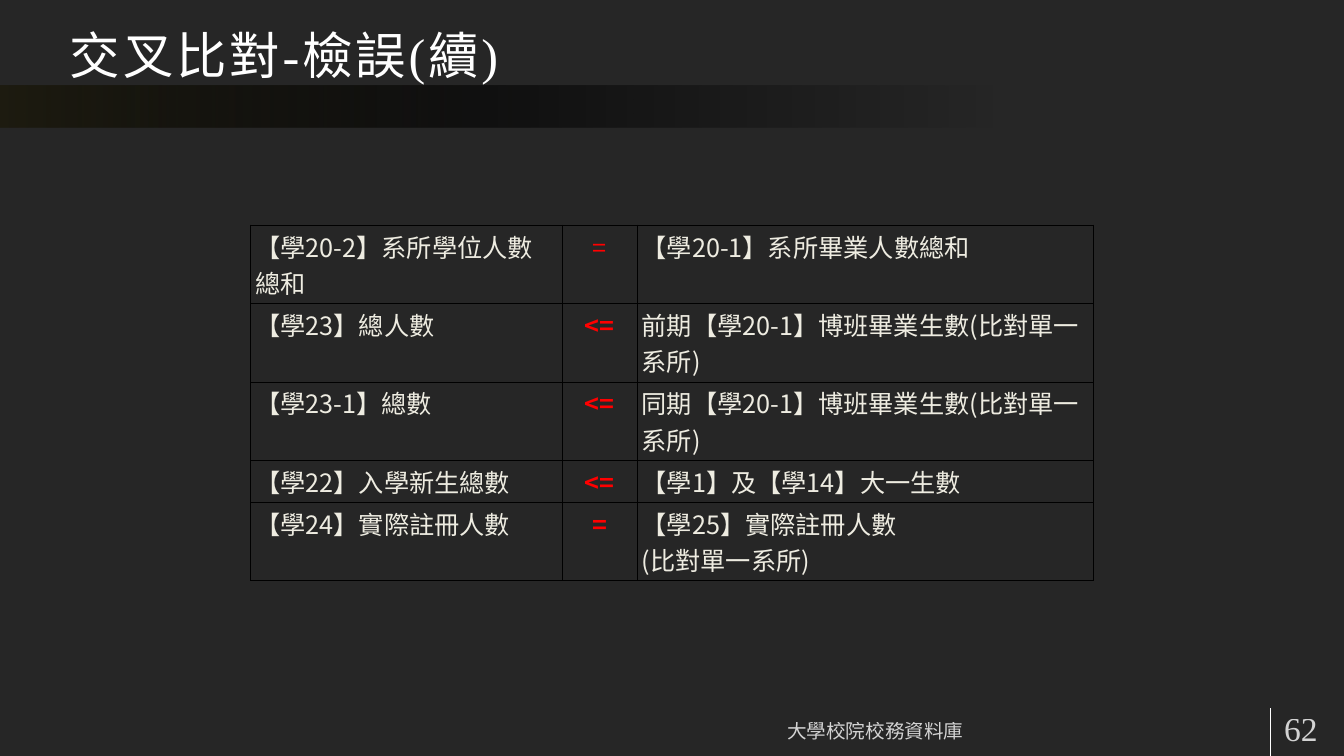
"""Build the cross-check slide with its table of consistency rules."""
from lxml import etree
from pptx import Presentation
from pptx.dml.color import RGBColor
from pptx.enum import shapes, text
from pptx.oxml import ns
from pptx.util import Inches, Pt

COLORS = {"bg": "262626", "gold": "1E1C11", "black": "000000",
          "white": "FFFFFF", "cream": "EEECE1", "red": "FF0000"}
SERIF, SANS = "Times New Roman", "Noto Sans CJK SC"


def add_color(parent, color, alpha=100):
    clr = etree.SubElement(parent, ns.qn("a:srgbClr"), val=COLORS[color])
    if alpha < 100:
        etree.SubElement(clr, ns.qn("a:alpha"), val=str(alpha * 1000))


def style(tf, size, font, color, align=text.PP_ALIGN.LEFT, bold=False, alpha=100):
    for p in tf.paragraphs:
        p.alignment = align
        for r in p.runs:
            r.font.size, r.font.name, r.font.bold = Pt(size), font, bold
            r.font.color.rgb = RGBColor.from_string(COLORS[color])
            if alpha < 100:
                fill = r.font._element.find(ns.qn("a:solidFill"))
                fill.remove(fill[0])
                add_color(fill, color, alpha)


prs = Presentation()
prs.slide_width, prs.slide_height = Inches(20), Inches(11.25)
s = prs.slides.add_slide(prs.slide_layouts[5])
s.background.fill.solid()
s.background.fill.fore_color.rgb = RGBColor.from_string(COLORS["bg"])

band = s.shapes.add_shape(shapes.MSO_SHAPE.RECTANGLE, 0, Inches(1.27), Inches(20), Inches(0.63))
band.shadow.inherit = False
band.line.fill.background()
band.fill.gradient()
band.fill.gradient_angle = 0
stops = band._element.spPr.find(".//" + ns.qn("a:gsLst"))
for stop in list(stops):
    stops.remove(stop)
for pos, color, alpha in [(0, "gold", 100), (39, "black", 54), (74, "black", 0)]:
    add_color(etree.SubElement(stops, ns.qn("a:gs"), pos=str(pos * 1000)), color, alpha)

rule = s.shapes.add_connector(shapes.MSO_CONNECTOR.STRAIGHT,
                              Inches(18.9), Inches(10.54), Inches(18.9), Inches(11.25))
rule.line.color.rgb = RGBColor.from_string(COLORS["white"])
rule.line.width = Pt(0.75)
etree.SubElement(rule._element.spPr, ns.qn("a:effectLst"))

title = s.shapes.title
title.left, title.top, title.width, title.height = Inches(0.86), 0, Inches(18), Inches(1.35)
title.text_frame.text = "交叉比對-檢誤(續)"
style(title.text_frame, 54, SERIF, "white")
title.text_frame.paragraphs[0].runs[0].font._element.set("spc", "300")

footer = s.shapes.add_textbox(Inches(7.16), Inches(10.54), Inches(11.73), Inches(0.6))
footer.text_frame.text = "大學校院校務資料庫"
style(footer.text_frame, 21, SERIF, "white", text.PP_ALIGN.CENTER, alpha=80)

number = s.shapes.add_textbox(Inches(18.93), Inches(10.54), Inches(1.15), Inches(0.6))
number.text_frame.text = "62"
style(number.text_frame, 36, SERIF, "white", alpha=80)

for sp, anchor in [(title, text.MSO_ANCHOR.BOTTOM), (footer, text.MSO_ANCHOR.BOTTOM),
                   (number, text.MSO_ANCHOR.MIDDLE)]:
    tf = sp.text_frame
    tf.word_wrap, tf.auto_size = True, text.MSO_AUTO_SIZE.NONE
    tf.vertical_anchor = anchor
    tf.margin_left = tf.margin_right = Inches(0.18)
    tf.margin_top = tf.margin_bottom = Inches(0.09)

rows = [
    ("【學20-2】系所學位人數總和", "=", "【學20-1】系所畢業人數總和"),
    ("【學23】總人數", "<=", "前期【學20-1】博班畢業生數(比對單一系所)"),
    ("【學23-1】總數", "<=", "同期【學20-1】博班畢業生數(比對單一系所)"),
    ("【學22】入學新生總數", "<=", "【學1】及【學14】大一生數"),
    ("【學24】實際註冊人數", "=", "【學25】實際註冊人數\v(比對單一系所)"),
]
table = s.shapes.add_table(len(rows), 3, Inches(3.73), Inches(3.35),
                           Inches(12.54), Inches(4.42)).table
table.first_row = table.horz_banding = False
for col, width in zip(table.columns, (4.64, 1.11, 6.79)):
    col.width = Inches(width)
for row, height in zip(table.rows, (0.97, 0.97, 0.97, 0.53, 0.97)):
    row.height = Inches(height)

for i, row in enumerate(rows):
    for j, words in enumerate(row):
        cell = table.cell(i, j)
        cell.text_frame.text = words
        if j == 1:
            style(cell.text_frame, 27, SANS, "red", text.PP_ALIGN.CENTER, bold=i > 0)
        else:
            style(cell.text_frame, 27, SANS, "cream")
        cell.margin_left = cell.margin_right = Inches(0.07)
        cell.margin_top = cell.margin_bottom = Inches(0.04)
        cell.fill.background()
        tcPr = cell._tc.get_or_add_tcPr()
        for k, side in enumerate(("lnL", "lnR", "lnT", "lnB")):
            ln = etree.Element(ns.qn("a:" + side), w=str(Pt(1)))
            add_color(etree.SubElement(ln, ns.qn("a:solidFill")), "black")
            tcPr.insert(k, ln)

prs.save("out.pptx")
